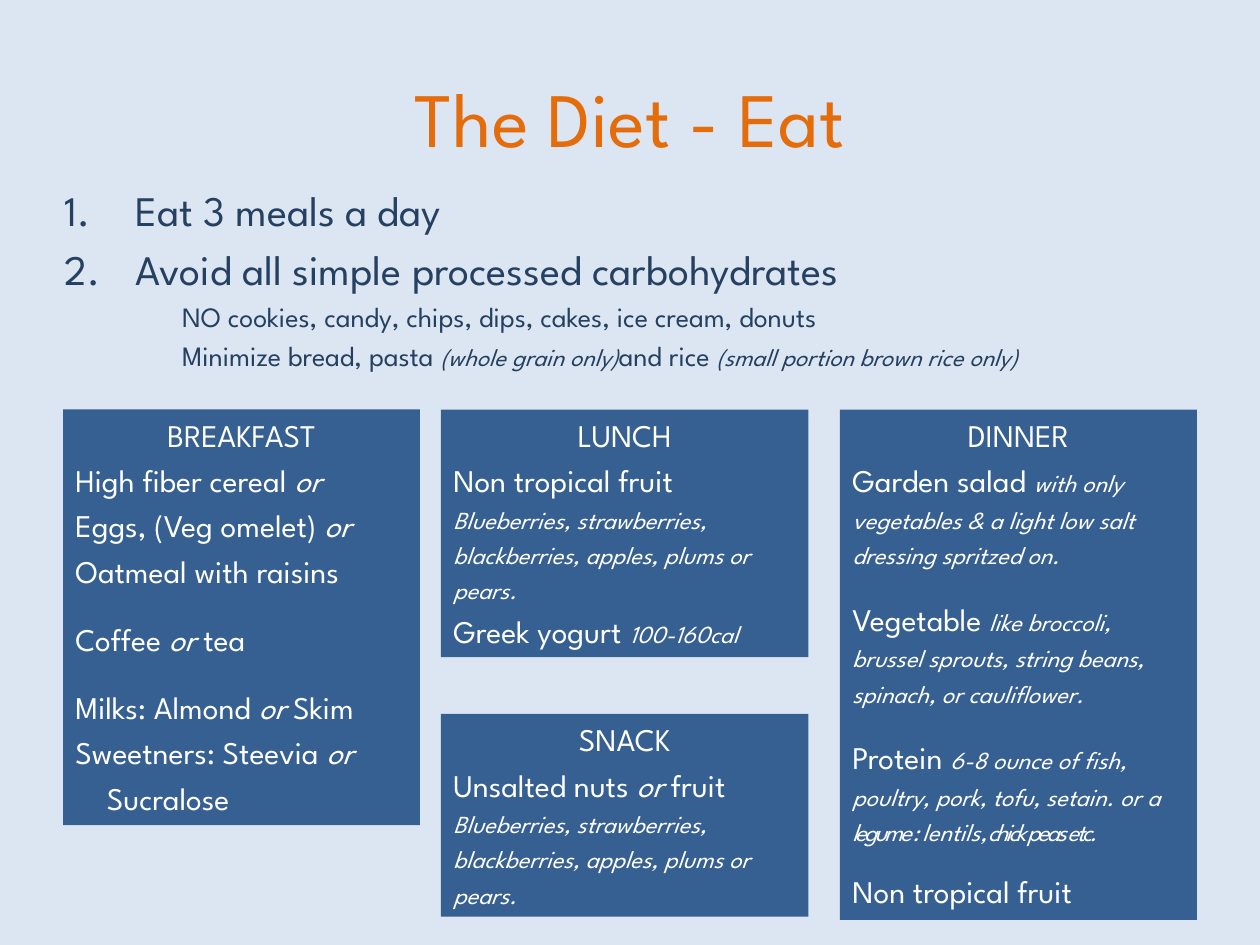
from lxml import etree
from pptx import Presentation
from pptx.dml.color import RGBColor
from pptx.enum.shapes import MSO_SHAPE
from pptx.enum.text import MSO_ANCHOR, PP_ALIGN
from pptx.oxml.ns import qn
from pptx.util import Inches, Pt

RECT = MSO_SHAPE.RECTANGLE
MIDDLE, TOP = MSO_ANCHOR.MIDDLE, MSO_ANCHOR.TOP
LEFT, CENTER = PP_ALIGN.LEFT, PP_ALIGN.CENTER

PALE = RGBColor(0xDC, 0xE6, 0xF2)
BLUE = RGBColor(0x37, 0x60, 0x92)
NAVY = RGBColor(0x25, 0x40, 0x61)
ORANGE = RGBColor(0xE4, 0x6C, 0x0A)
WHITE = RGBColor(0xFF, 0xFF, 0xFF)

FONT = "League Spartan"
CELL = Inches(1) // 12  # the slide is a grid of 120 columns by 90 rows

TITLE = {"size": Pt(44)}
POINT = {"size": Pt(24)}
DETAIL = {"size": Pt(16)}
FOOD = {"size": Pt(18)}
OR = {"size": Pt(18), "italic": True}
NOTE = {"size": Pt(14), "italic": True}
TIGHT = NOTE | {"spacing": -150}

GAP = {"space_before": Pt(13)}
SMALL_GAP = {"space_before": Pt(10)}
HANGING = {"indent": 0.25}

POINTS = ["Eat 3 meals a day", "Avoid all simple processed carbohydrates"]
DETAILS = [
    [("NO cookies, candy, chips, dips, cakes, ice cream, donuts", DETAIL)],
    [("Minimize bread, pasta ", DETAIL), ("(whole grain only)", NOTE),
     ("and rice ", DETAIL), ("(small portion brown rice only)", NOTE)],
]
BERRIES = ([("Blueberries, strawberries, blackberries, apples, plums or pears.", NOTE)], {})

# Each meal: name, box in grid cells (column, row, width, height), lines
MEALS = [
    ("BREAKFAST", (6, 39, 34, 39.6), [
        ([("High fiber cereal ", FOOD), ("or", OR)], {}),
        ([("Eggs, (Veg omelet) ", FOOD), ("or", OR)], {}),
        ([("Oatmeal with raisins", FOOD)], {}),
        ([("Coffee ", FOOD), ("or", OR), (" tea", FOOD)], GAP),
        ([("Milks: Almond ", FOOD), ("or", OR), (" Skim", FOOD)], GAP),
        ([("Sweetners: Steevia ", FOOD), ("or ", OR), ("Sucralose", FOOD)], HANGING),
    ]),
    ("LUNCH", (42, 39, 35, 23.6), [
        ([("Non tropical fruit", FOOD)], {}),
        BERRIES,
        ([("Greek yogurt ", FOOD), ("100-160cal", NOTE)], {}),
    ]),
    ("SNACK", (42, 68, 35, 19.3), [
        ([("Unsalted nuts ", FOOD), ("or", OR), (" fruit", FOOD)], {}),
        BERRIES,
    ]),
    ("DINNER", (80, 39, 34, 48.6), [
        ([("Garden salad ", FOOD),
          ("with only vegetables & a light low salt dressing spritzed on.", NOTE)], {}),
        ([("Vegetable ", FOOD),
          ("like broccoli, brussel sprouts, string beans, spinach, or cauliflower.", NOTE)], GAP),
        ([("Protein ", FOOD),
          ("6-8 ounce of fish, poultry, pork, tofu, setain. or ", NOTE),
          ("a legume : ", TIGHT), ("lentils", NOTE), (", chick peas etc.", TIGHT)], GAP),
        ([("Non tropical fruit", FOOD)], SMALL_GAP),
    ]),
]


def grid(box):
    return [round(v * CELL) for v in box]


def prepare(tf, anchor=TOP):
    tf.word_wrap = True
    tf.vertical_anchor = anchor


def add_line(tf, runs, color, align=LEFT, margin=0, indent=0, **formats):
    """Add a paragraph of (text, style) runs; the first one fills the empty paragraph."""
    p = tf.paragraphs[0] if not tf.paragraphs[0].runs else tf.add_paragraph()
    p.alignment = align
    for name, value in formats.items():
        setattr(p, name, value)
    pPr = p._p.get_or_add_pPr()
    pPr.set("marL", str(Inches(margin + indent)))
    pPr.set("indent", str(-Inches(indent)))
    for text, style in runs:
        r = p.add_run()
        r.text = text
        r.font.name = FONT
        r.font.color.rgb = color
        for name, value in style.items():
            if name == "spacing":
                r._r.get_or_add_rPr().set("spc", str(value))
            else:
                setattr(r.font, name, value)
    return p


def add_title(s, box, text):
    tf = s.shapes.add_textbox(*grid(box)).text_frame
    prepare(tf, MIDDLE)
    add_line(tf, [(text, TITLE)], ORANGE, CENTER)


def add_rules(s, box):
    """Numbered points, with the details of the last one below."""
    tf = s.shapes.add_textbox(*grid(box)).text_frame
    prepare(tf)
    for text in POINTS:
        p = add_line(tf, [(text, POINT)], NAVY, indent=0.56, space_before=Pt(4.8))
        pPr = p._p.get_or_add_pPr()
        etree.SubElement(pPr, qn("a:buFont"), typeface="+mj-lt")
        etree.SubElement(pPr, qn("a:buAutoNum"), type="arabicPeriod")
    for runs in DETAILS:
        add_line(tf, runs, NAVY, margin=0.93, space_before=Pt(3.2))


def add_meal(s, name, box, lines):
    sp = s.shapes.add_shape(RECT, *grid(box))
    sp.shadow.inherit = False
    sp.fill.solid()
    sp.fill.fore_color.rgb = BLUE
    sp.line.fill.background()
    prepare(sp.text_frame)
    add_line(sp.text_frame, [(name, FOOD)], WHITE, CENTER)
    for runs, formats in lines:
        add_line(sp.text_frame, runs, WHITE, line_spacing=1.2, **formats)


def main():
    prs = Presentation()
    prs.slide_width, prs.slide_height = 120 * CELL, 90 * CELL
    s = prs.slides.add_slide(prs.slide_layouts[6])
    s.background.fill.solid()
    s.background.fill.fore_color.rgb = PALE
    add_title(s, (6, 3.6, 108, 15), "The Diet - Eat")
    add_rules(s, (5, 17, 112, 22))
    for meal in MEALS:
        add_meal(s, *meal)
    prs.save("out.pptx")


if __name__ == "__main__":
    main()
